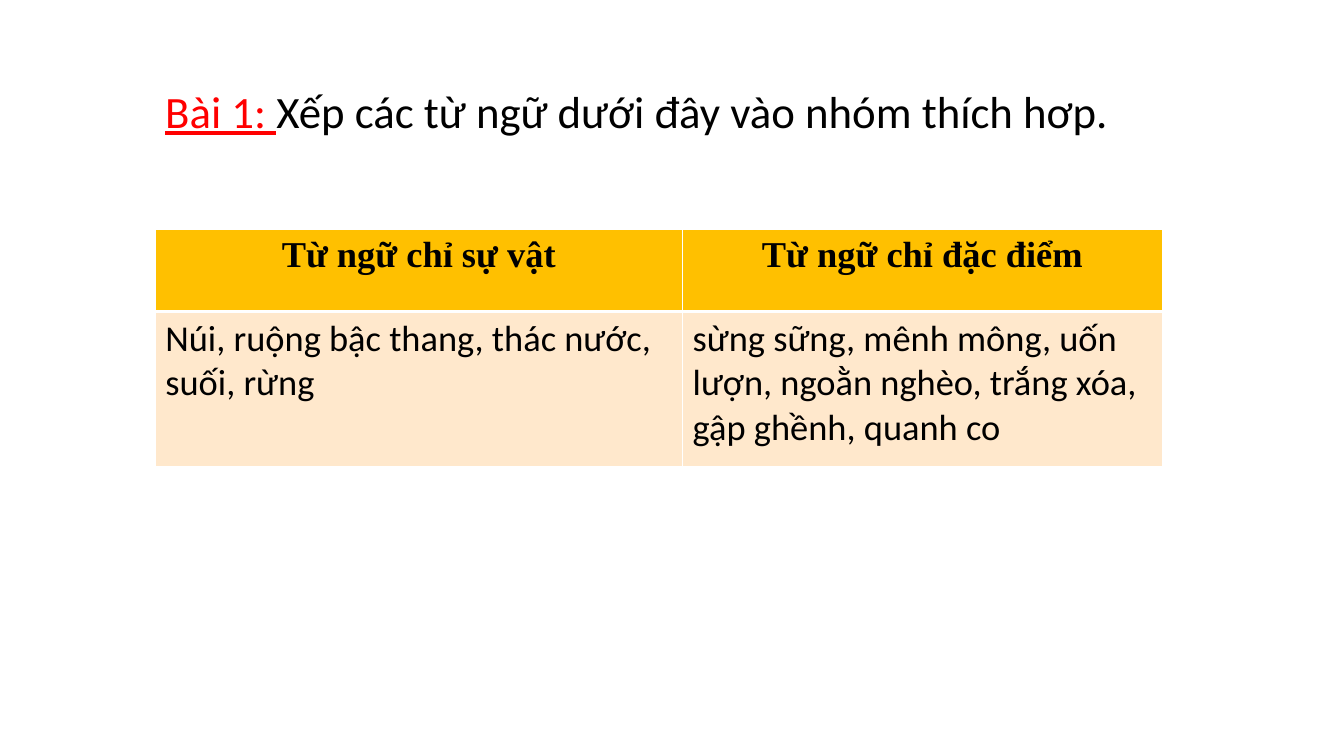
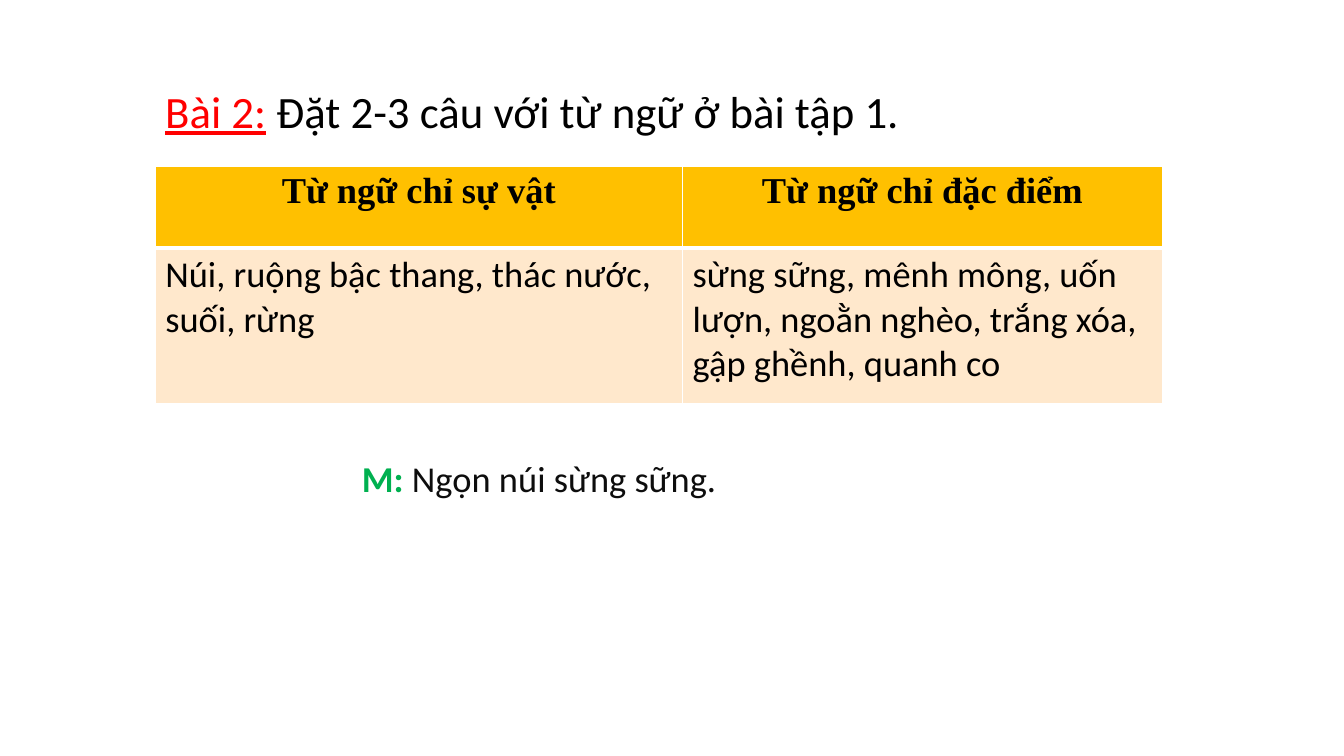
"""Build two Vietnamese vocabulary exercise slides sharing a heading and a word table."""
from lxml import etree
from pptx import Presentation
from pptx.dml.color import RGBColor
from pptx.enum.text import MSO_AUTO_SIZE, PP_ALIGN
from pptx.oxml.ns import qn
from pptx.util import Inches, Pt

CENTER, LEFT = PP_ALIGN.CENTER, PP_ALIGN.LEFT
FIT_SHAPE = MSO_AUTO_SIZE.SHAPE_TO_FIT_TEXT

BLACK, INK, WHITE = "000000", "0D0D0D", "FFFFFF"
RED, GREEN, AMBER, CREAM = "FF0000", "00B050", "FFC000", "FFE8CC"

LABEL = {"size": Pt(32), "name": "Calibri", "color": RED, "underline": True}
TASK = {"size": Pt(32), "name": "Calibri", "color": BLACK}
HEADER = {"size": Pt(26), "name": "Times New Roman", "color": BLACK, "bold": True}
WORDS = {"size": Pt(26), "name": "Calibri", "color": BLACK, "bold": False}
MARK = {"size": Pt(26), "name": "Calibri", "color": GREEN, "bold": True}
SENTENCE = {"size": Pt(26), "name": "Calibri", "color": INK}

WORD_GROUPS = [
    ("Từ ngữ chỉ sự vật", "Từ ngữ chỉ đặc điểm"),
    ("Núi, ruộng bậc thang, thác nước, suối, rừng",
     "sừng sững, mênh mông, uốn lượn, ngoằn nghèo, trắng xóa, gập ghềnh, quanh co"),
]
ROW_STYLES = [
    {"height": 0.81, "fill": AMBER, "font": HEADER, "align": CENTER,
     "borders": {"L": 1, "R": 1, "T": 1, "B": 3}},
    {"height": 1.54, "fill": CREAM, "font": WORDS, "align": LEFT,
     "borders": {"L": 1, "R": 1, "T": 3, "B": 1}},
]
COLUMN_WIDTHS = [5.23, 4.76]
MARGIN = 1.54
HEADING_BOX = (MARGIN, 0.78, 10.82, 0.64)
EXAMPLE_BOX = (3.49, 4.48, 5.49, 0.54)

EXERCISES = [
    {"heading": [("Bài 1: ", LABEL),
                 ("Xếp các từ ngữ dưới đây vào nhóm thích hơp.", TASK)],
     "table_top": 2.28, "example": []},
    {"heading": [("Bài 2:", LABEL),
                 (" Đặt 2-3 câu với từ ngữ ở bài tập 1.", TASK)],
     "table_top": 1.65,
     "example": [("M: ", MARK), ("Ngọn núi sừng sững.", SENTENCE)]},
]


def rgb(value):
    """Turn a hex string into a colour."""
    return RGBColor.from_string(value)


def add_run(paragraph, text, style):
    """Append text in the given style."""
    run = paragraph.add_run()
    run.text = text
    for key, value in style.items():
        if key == "color":
            run.font.color.rgb = rgb(value)
        else:
            setattr(run.font, key, value)


def add_line(slide, box, runs):
    """Add a text box holding one line of styled runs."""
    frame = slide.shapes.add_textbox(*map(Inches, box)).text_frame
    frame.word_wrap = True
    frame.auto_size = FIT_SHAPE
    for text, style in runs:
        add_run(frame.paragraphs[0], text, style)


def set_borders(cell, widths):
    """Draw white cell borders of the given point widths."""
    properties = cell._tc.get_or_add_tcPr()
    for side, width in widths.items():
        line = etree.SubElement(properties, qn(f"a:ln{side}"), w=str(Pt(width)))
        solid = etree.SubElement(line, qn("a:solidFill"))
        etree.SubElement(solid, qn("a:srgbClr"), val=WHITE)


def add_word_table(slide, top):
    """Add the table of word groups at the given height."""
    size = sum(COLUMN_WIDTHS), sum(style["height"] for style in ROW_STYLES)
    table = slide.shapes.add_table(
        len(WORD_GROUPS), len(COLUMN_WIDTHS), *map(Inches, (MARGIN, top, *size))).table
    for column, width in zip(table.columns, COLUMN_WIDTHS):
        column.width = Inches(width)
    for row, texts, style in zip(table.rows, WORD_GROUPS, ROW_STYLES):
        row.height = Inches(style["height"])
        for cell, text in zip(row.cells, texts):
            set_borders(cell, style["borders"])
            cell.fill.solid()
            cell.fill.fore_color.rgb = rgb(style["fill"])
            paragraph = cell.text_frame.paragraphs[0]
            paragraph.alignment = style["align"]
            add_run(paragraph, text, style["font"])


def main():
    """Build and save the presentation."""
    deck = Presentation()
    deck.slide_width, deck.slide_height = Inches(13.33), Inches(7.5)
    for exercise in EXERCISES:
        slide = deck.slides.add_slide(deck.slide_layouts[6])
        add_line(slide, HEADING_BOX, exercise["heading"])
        add_word_table(slide, exercise["table_top"])
        if exercise["example"]:
            add_line(slide, EXAMPLE_BOX, exercise["example"])
    deck.save("out.pptx")


if __name__ == "__main__":
    main()
